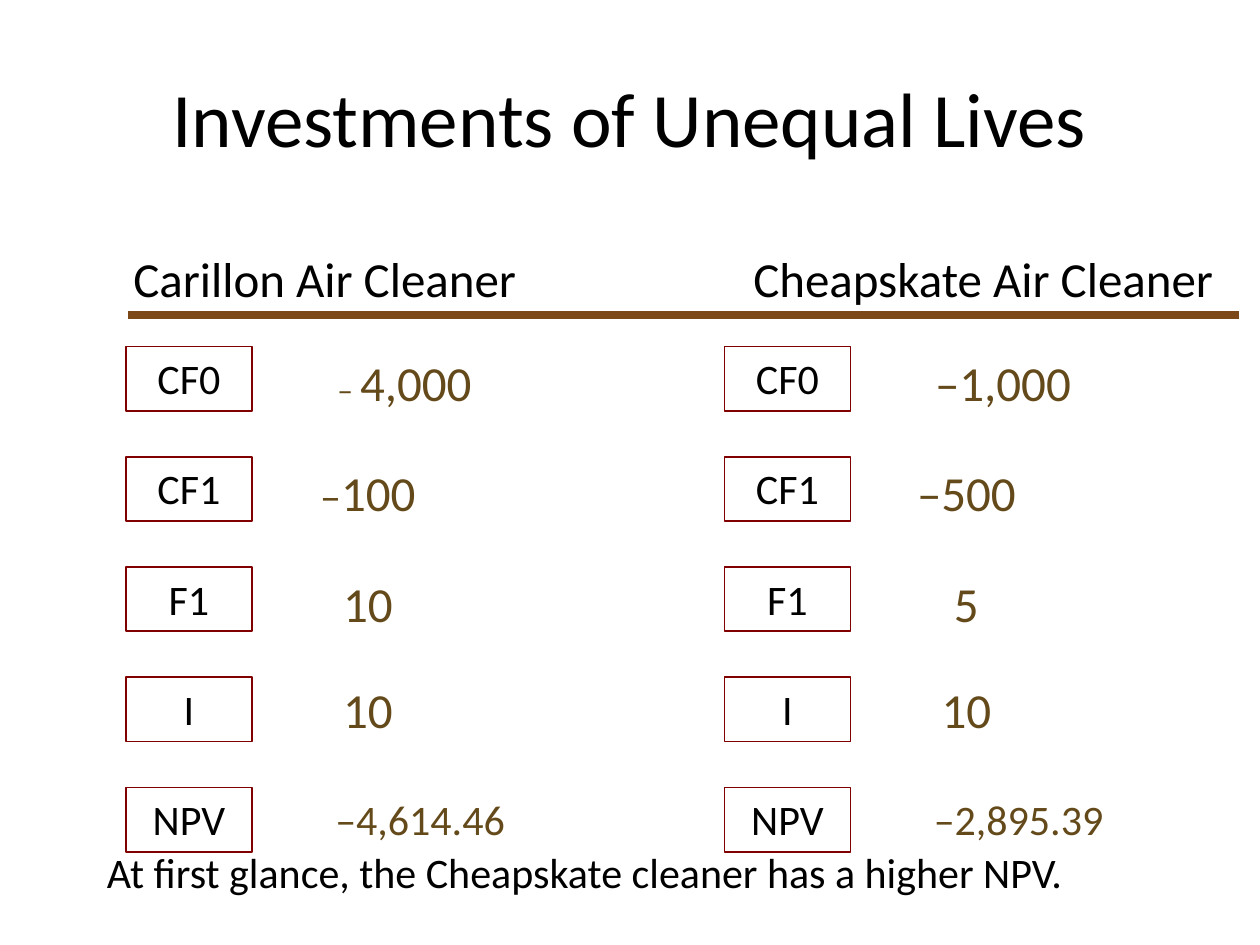
import lxml.etree
import pptx
import pptx.dml.color
import pptx.enum.shapes
import pptx.enum.text
import pptx.oxml.ns
import pptx.util
from pptx.util import Inches

BLACK = pptx.dml.color.RGBColor(0x00, 0x00, 0x00)
WHITE = pptx.dml.color.RGBColor(0xFF, 0xFF, 0xFF)
MAROON = pptx.dml.color.RGBColor(0x80, 0x00, 0x00)
OLIVE = pptx.dml.color.RGBColor(0x64, 0x4A, 0x1A)
BROWN = pptx.dml.color.RGBColor(0x7C, 0x48, 0x18)

LEFT = pptx.enum.text.PP_ALIGN.LEFT
CENTER = pptx.enum.text.PP_ALIGN.CENTER
TOP = pptx.enum.text.MSO_ANCHOR.TOP
MIDDLE = pptx.enum.text.MSO_ANCHOR.MIDDLE

ROW_PITCH = Inches(0.875)
KEYS = ["CF0", "CF1", "F1", "I", "NPV"]
# Each value: its runs (text, size), box width, shift from the top of its row
CARILLON = [
    ([("– ", 18), ("4,000", 28)], 1.58, 0),
    ([("–", 24), ("100", 28)], 1, 0),
    ([("10", 28)], 1, 0),
    ([("10", 28)], 1, -0.03),
    ([("–4,614.46", 24)], 1.83, 0),
]
CHEAPSKATE = [
    ([("–1,000", 28)], 1.58, 0),
    ([("–500", 28)], 1, 0),
    ([("5", 28)], 1, 0),
    ([("10", 28)], 1, -0.03),
    ([("–2,895.39", 24)], 1.83, 0),
]


def write(shape, runs, color=BLACK, alignment=LEFT, anchor=TOP):
    frame = shape.text_frame
    frame.word_wrap = True
    frame.vertical_anchor = anchor
    paragraph = frame.paragraphs[0]
    paragraph.alignment = alignment
    for text, size in runs:
        run = paragraph.add_run()
        run.text = text
        run.font.name = "Calibri"
        run.font.size = pptx.util.Pt(size)
        run.font.color.rgb = color


def add_text(slide, box, runs, **style):
    write(slide.shapes.add_textbox(*box), runs, **style)


def add_key(slide, box, text):
    shape = slide.shapes.add_shape(pptx.enum.shapes.MSO_SHAPE.RECTANGLE, *box)
    shape.shadow.inherit = False
    shape.fill.solid()
    shape.fill.fore_color.rgb = WHITE
    shape.line.color.rgb = MAROON
    shape.line.width = pptx.util.Pt(1)
    write(shape, [(text, 24)], alignment=CENTER)


def add_cash_flows(slide, left, top, values):
    """A column of framed keys with the value entered for each."""
    for row, (key, (runs, width, shift)) in enumerate(zip(KEYS, values)):
        row_top = top + row * ROW_PITCH
        add_key(slide, (left, row_top, Inches(1), Inches(0.51)), key)
        height = Inches(0.5) if key == "NPV" else Inches(0.57)
        box = (left + Inches(1.42), row_top + Inches(shift), Inches(width), height)
        add_text(slide, box, runs, color=OLIVE, alignment=CENTER)


def add_headings(slide, left, top):
    """Two column headings above a thick rule."""
    for text, offset, width in [
        ("Carillon Air Cleaner", 0, 3.83),
        ("Cheapskate Air Cleaner", 4.92, 4.12),
    ]:
        box = (left + Inches(offset), top, Inches(width), Inches(0.57))
        add_text(slide, box, [(text, 28)])

    rule_left, rule_top = left + Inches(0.09), top + Inches(0.58)
    rule = slide.shapes.add_connector(
        pptx.enum.shapes.MSO_CONNECTOR.STRAIGHT,
        rule_left, rule_top, rule_left + Inches(8.75), rule_top)
    rule.line.color.rgb = BROWN
    rule.line.width = pptx.util.Pt(4.5)
    properties = rule.element.spPr
    properties.find(pptx.oxml.ns.qn("a:ln")).set("cap", "sq")
    lxml.etree.SubElement(properties, pptx.oxml.ns.qn("a:effectLst"))


def main():
    presentation = pptx.Presentation()
    presentation.slide_width = Inches(10)
    presentation.slide_height = Inches(7.5)
    slide = presentation.slides.add_slide(presentation.slide_layouts[6])

    # Title and conclusion
    add_text(slide, (Inches(0.5), Inches(0.3), Inches(9), Inches(1.25)),
             [("Investments of Unequal Lives", 44)], alignment=CENTER, anchor=MIDDLE)
    add_text(slide, (Inches(0.75), Inches(6.67), Inches(8.33), Inches(0.58)),
             [("At first glance, the Cheapskate cleaner has a higher NPV.", 24)])

    # The two investments side by side
    add_cash_flows(slide, Inches(1), Inches(2.75), CARILLON)
    add_cash_flows(slide, Inches(5.75), Inches(2.75), CHEAPSKATE)
    add_headings(slide, Inches(0.96), Inches(1.92))

    presentation.save("out.pptx")


if __name__ == "__main__":
    main()
